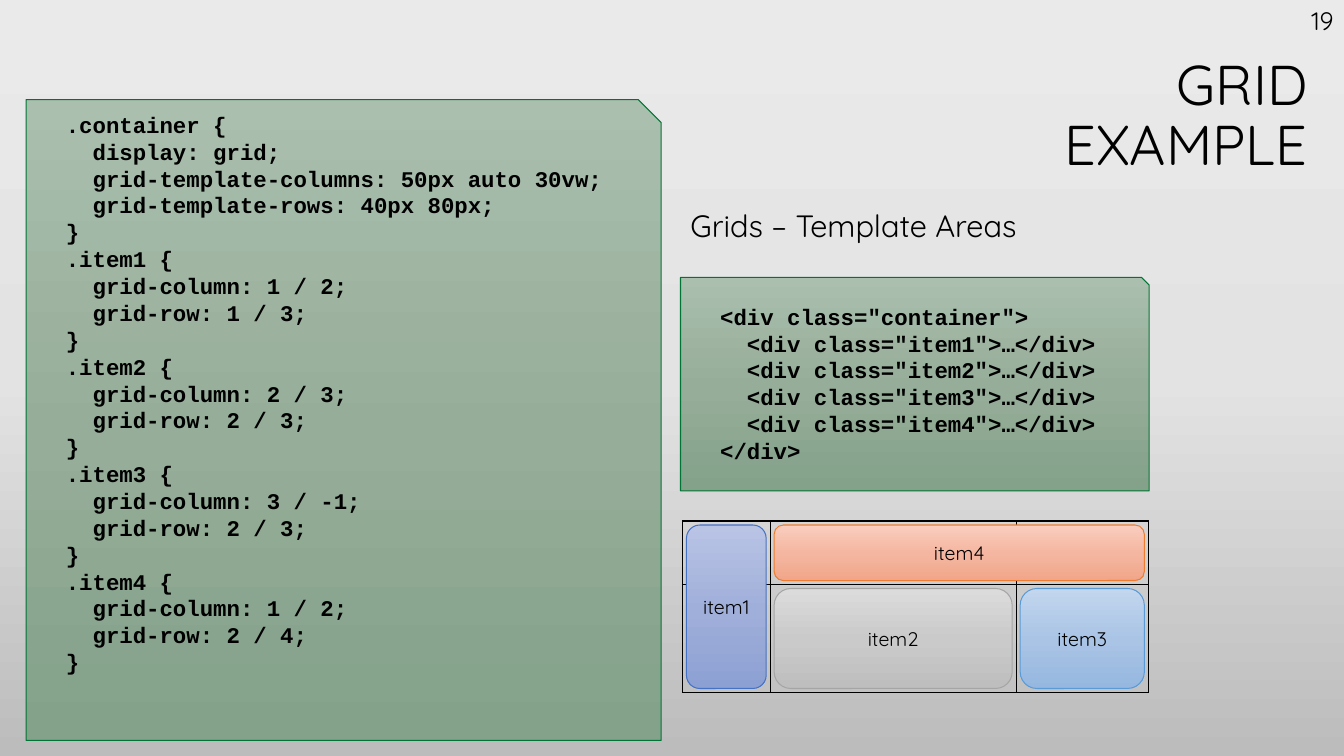
from dataclasses import dataclass
from itertools import accumulate

from lxml import etree
from pptx import Presentation
from pptx.dml.color import RGBColor
from pptx.enum.shapes import MSO_SHAPE
from pptx.enum.text import MSO_ANCHOR, MSO_AUTO_SIZE, PP_ALIGN
from pptx.oxml import parse_xml
from pptx.oxml.ns import nsdecls, qn
from pptx.util import Cm, Pt

SNIPPED, ROUNDED = MSO_SHAPE.SNIP_1_RECTANGLE, MSO_SHAPE.ROUNDED_RECTANGLE
TOP, MIDDLE = MSO_ANCHOR.TOP, MSO_ANCHOR.MIDDLE
LEFT, CENTER, RIGHT = PP_ALIGN.LEFT, PP_ALIGN.CENTER, PP_ALIGN.RIGHT
TITLE_ONLY = 5


@dataclass(frozen=True)
class Theme:
    font: str = "Quicksand"
    mono: str = "Courier New"
    title: int = 40
    subtitle: int = 22
    number: int = 18
    code: int = 16
    item: int = 14
    ink: str = "000000"
    # Gradient colours from top to bottom
    page: tuple = ("EBEAEA", "E4E3E3", "BDBCBC")
    # Gradient colours, then the outline
    green: tuple = ("ABBFAE", "95AD99", "84A189", "007434")
    indigo: tuple = ("B9C4E5", "A0AFDA", "8DA0D3", "4472C4")
    grey: tuple = ("DBDBDB", "CACACA", "BEBEBE", "A5A5A5")
    blue: tuple = ("C2D6EE", "A9C4E5", "96B7DF", "5B9BD5")
    orange: tuple = ("FACDBE", "F4B6A0", "F1A689", "ED7D31")


THEME = Theme()

CSS = """.container {
  display: grid;
  grid-template-columns: 50px auto 30vw;
  grid-template-rows: 40px 80px;
}
.item1 {
  grid-column: 1 / 2;
  grid-row: 1 / 3;
}
.item2 {
  grid-column: 2 / 3;
  grid-row: 2 / 3;
}
.item3 {
  grid-column: 3 / -1;
  grid-row: 2 / 3;
}
.item4 {
  grid-column: 1 / 2;
  grid-row: 2 / 4;
}"""

HTML = """<div class="container">
  <div class="item1">…</div>
  <div class="item2">…</div>
  <div class="item3">…</div>
  <div class="item4">…</div>
</div>"""

COLUMNS, ROWS = (2.21, 6.2, 3.33), (1.6, 2.72)
# Name, first and last column line, first and last row line, colours
ITEMS = (
    ("item1", (0, 1), (0, 2), THEME.indigo),
    ("item2", (1, 2), (1, 2), THEME.grey),
    ("item3", (2, 3), (1, 2), THEME.blue),
    ("item4", (1, 3), (0, 1), THEME.orange),
)


def cm(box):
    return [Cm(round(v, 2)) for v in box]


def set_gradient(fill, colors, middle=52):
    fill.gradient()
    fill.gradient_angle = 270
    stops = fill.gradient_stops
    for stop, color, position in zip(stops, (colors[0], colors[2]), (0, 1)):
        stop.color.rgb = RGBColor.from_string(color)
        stop.position = position
    return colors[1], middle * 1000


def add_middle_stop(element, color, position):
    stops = next(element.iter(qn("a:gsLst")))
    stop = etree.Element(qn("a:gs"), pos=str(position))
    etree.SubElement(stop, qn("a:srgbClr"), val=color)
    stops.insert(1, stop)


def set_text(tf, text, size, font=THEME.font, bold=False, align=LEFT,
             anchor=MIDDLE, spacing=1.0):
    tf.text = text
    tf.word_wrap = True
    tf.auto_size = MSO_AUTO_SIZE.NONE
    tf.vertical_anchor = anchor
    for p in tf.paragraphs:
        p.alignment = align
        p.line_spacing = spacing
        for r in p.runs:
            r.font.name, r.font.size, r.font.bold = font, Pt(size), bold
            r.font.color.rgb = RGBColor.from_string(THEME.ink)


def add_panel(slide, kind, box, colors):
    sp = slide.shapes.add_shape(kind, *cm(box))
    sp.shadow.inherit = False
    add_middle_stop(sp.fill._xPr, *set_gradient(sp.fill, colors))
    sp.line.color.rgb = RGBColor.from_string(colors[3])
    sp.line.width = Pt(0.75)
    return sp


def add_label(slide, box, text, size, **style):
    sp = slide.shapes.add_textbox(*cm(box))
    set_text(sp.text_frame, text, size, **style)


def add_title(slide, box, text):
    sp = slide.shapes.title
    sp.left, sp.top, sp.width, sp.height = cm(box)
    set_text(sp.text_frame, text, THEME.title, align=RIGHT, spacing=0.9)


def add_code(slide, box, code, anchor):
    sp = add_panel(slide, SNIPPED, box, THEME.green)
    sp.adjustments[0] = 0.036
    tf = sp.text_frame
    tf.margin_left, tf.margin_top, tf.margin_right, tf.margin_bottom = cm((1, 0, 0.25, 0.13))
    set_text(tf, code, THEME.code, font=THEME.mono, bold=True, anchor=anchor)


def set_borders(cell):
    tc_pr = cell._tc.get_or_add_tcPr()
    for i, side in enumerate(("lnL", "lnR", "lnT", "lnB")):
        tc_pr.insert(i, parse_xml(
            f'<a:{side} {nsdecls("a")} w="{Pt(1)}"><a:solidFill>'
            f'<a:srgbClr val="{THEME.ink}"/></a:solidFill></a:{side}>'))


def add_grid(slide, box, inset=0.1):
    # Grid lines
    left, top = box[:2]
    table = slide.shapes.add_table(len(ROWS), len(COLUMNS), *cm(box)).table
    table.first_row = table.horz_banding = False
    for column, width in zip(table.columns, COLUMNS):
        column.width = Cm(width)
    for row, height in zip(table.rows, ROWS):
        row.height = Cm(height)
    for cell in table.iter_cells():
        cell.fill.background()
        set_borders(cell)

    # Items, each spanning from one grid line to another
    xs = list(accumulate(COLUMNS, initial=left))
    ys = list(accumulate(ROWS, initial=top))
    for name, (c1, c2), (r1, r2), colors in ITEMS:
        sp = add_panel(slide, ROUNDED, (xs[c1] + inset, ys[r1] + inset,
                                        xs[c2] - xs[c1] - 2 * inset,
                                        ys[r2] - ys[r1] - 2 * inset), colors)
        set_text(sp.text_frame, name, THEME.item, align=CENTER)


def add_example_slide(prs):
    slide = prs.slides.add_slide(prs.slide_layouts[TITLE_ONLY])
    fill = slide.background.fill
    middle = set_gradient(fill, THEME.page, 50)
    add_middle_stop(slide.element, *middle)

    # Heading and slide number
    add_title(slide, (0.66, 1.17, 32.54, 3.58), "GRID\vEXAMPLE")
    add_label(slide, (26.54, 0, 7.32, 1.02), "19", THEME.number, align=RIGHT)

    # Style sheet on the left
    add_code(slide, (0.66, 2.51, 16, 16.15), CSS, TOP)

    # Subtitle, markup and resulting grid on the right
    x, width = 17.15, 11.81
    add_label(slide, (x, 5.13, width, 1.19), "Grids – Template Areas",
              THEME.subtitle, spacing=0.9)
    add_code(slide, (x, 6.99, width, 5.38), HTML, MIDDLE)
    add_grid(slide, (x + 0.05, 13.13, sum(COLUMNS), sum(ROWS)))


def main():
    prs = Presentation()
    prs.slide_width, prs.slide_height = Cm(33.87), Cm(19.05)
    add_example_slide(prs)
    prs.save("out.pptx")


if __name__ == "__main__":
    main()
